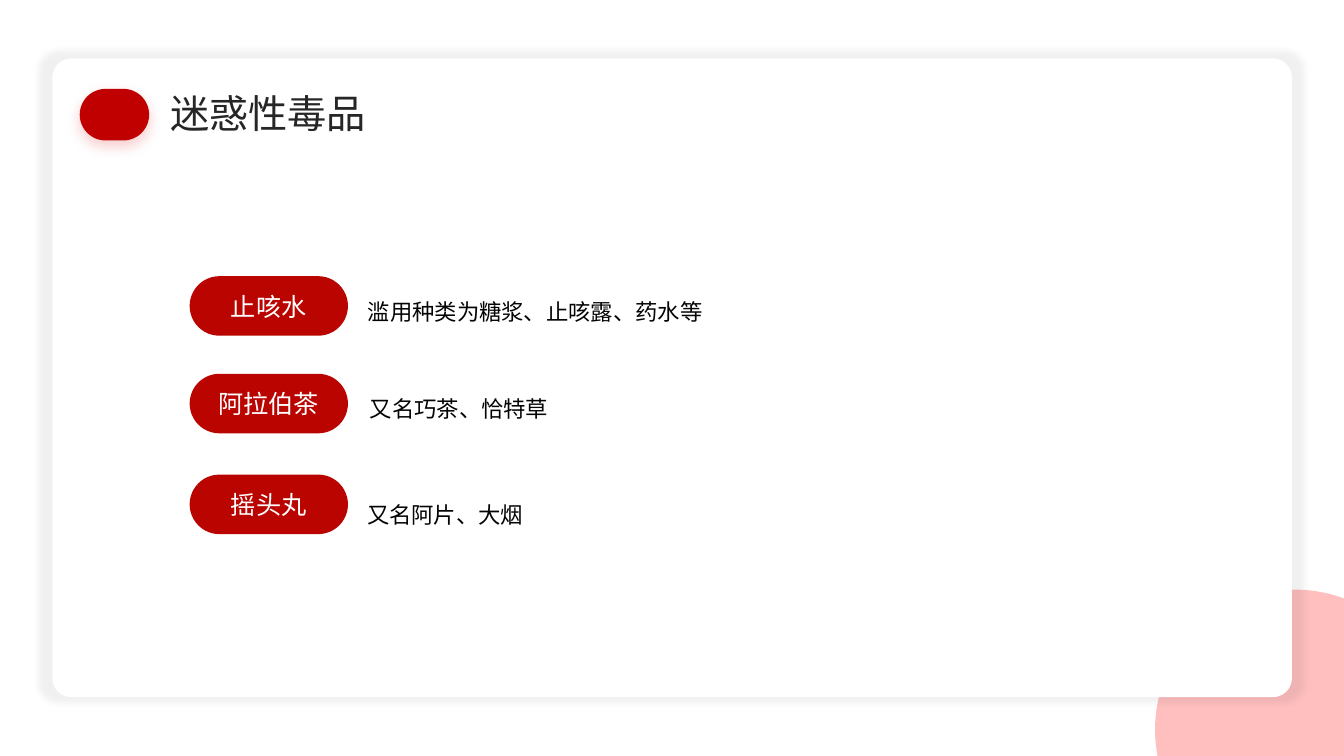
from dataclasses import dataclass
from math import asin, acos, cos, pi, sin

from pptx import Presentation
from pptx.dml.color import RGBColor
from pptx.enum.shapes import MSO_AUTO_SHAPE_TYPE as Preset
from pptx.enum.text import MSO_ANCHOR as Anchor, MSO_AUTO_SIZE as AutoSize, PP_ALIGN as Align
from pptx.oxml.ns import qn
from pptx.oxml.xmlchemy import OxmlElement
from pptx.util import Cm, Pt

FONT = "Noto Sans CJK SC"
PAGE_WIDTH, PAGE_HEIGHT = 33.87, 19.05
RED, PILL_RED, PINK, WHITE = "C00000", "B90400", "FFBFBF", "FFFFFF"
PILL_LEFT, PILL_WIDTH, PILL_HEIGHT = 4.78, 3.99, 1.5


@dataclass
class Frame:
    left: float
    top: float
    width: float
    height: float

    def lengths(self) -> tuple:
        return Cm(self.left), Cm(self.top), Cm(self.width), Cm(self.height)


@dataclass
class Shadow:
    color: str
    alpha: int
    blur: float
    distance: float = 0
    angle: int = 0
    scale: int = 100


@dataclass
class Drug:
    name: str
    pill_top: float
    note: str
    note_frame: Frame


DRUGS = [
    Drug("止咳水", 6.96, "滥用种类为糖浆、止咳露、药水等", Frame(9.02, 7.19, 9.07, 1.14)),
    Drug("阿拉伯茶", 9.42, "又名巧茶、恰特草", Frame(9.07, 9.63, 5.08, 1.14)),
    Drug("摇头丸", 11.96, "又名阿片、大烟", Frame(9.0, 12.29, 4.5, 1.14)),
]


def rgb(color: str) -> RGBColor:
    return RGBColor.from_string(color)


def paint(shape, color: str) -> None:
    shape.shadow.inherit = False
    shape.fill.solid()
    shape.fill.fore_color.rgb = rgb(color)
    shape.line.fill.background()


def add_shadow(shape, shadow: Shadow) -> None:
    outer = OxmlElement("a:outerShdw")
    settings = {
        "blurRad": Pt(shadow.blur),
        "dist": Pt(shadow.distance),
        "dir": shadow.angle * 60000,
        "sx": shadow.scale * 1000,
        "sy": shadow.scale * 1000,
        "algn": "ctr",
        "rotWithShape": 0,
    }
    for key, value in settings.items():
        outer.set(key, str(value))
    color = OxmlElement("a:srgbClr")
    color.set("val", shadow.color)
    alpha = OxmlElement("a:alpha")
    alpha.set("val", str(shadow.alpha * 1000))
    color.append(alpha)
    outer.append(color)
    shape._element.spPr.find(qn("a:effectLst")).append(outer)


def add_rounded(page, frame: Frame, color: str, rounding: float = 0.5):
    shape = page.shapes.add_shape(Preset.ROUNDED_RECTANGLE, *frame.lengths())
    shape.adjustments[0] = rounding
    paint(shape, color)
    return shape


def write(box, text: str, *, size: float, color: str, align=Align.LEFT,
          spacing: float = 1.0, anchor=Anchor.TOP, wrap: bool = True) -> None:
    frame = box.text_frame
    frame.word_wrap = wrap
    frame.vertical_anchor = anchor
    para = frame.paragraphs[0]
    para.alignment = align
    para.line_spacing = spacing
    span = para.add_run()
    span.text = text
    span.font.size = Pt(size)
    span.font.name = FONT
    span.font.color.rgb = rgb(color)
    east_asian = OxmlElement("a:ea")
    east_asian.set("typeface", FONT)
    span._r.get_or_add_rPr().append(east_asian)


def add_text(page, frame: Frame, text: str, **style) -> None:
    box = page.shapes.add_textbox(*frame.lengths())
    write(box, text, **style)
    box.text_frame.auto_size = AutoSize.SHAPE_TO_FIT_TEXT


def add_corner_circle(page, x: float, y: float, radius: float, steps: int = 90) -> None:
    """Draw the part of a circle that lies inside the bottom right corner."""
    start = pi - asin((PAGE_HEIGHT - y) / radius)
    end = 2 * pi - acos((PAGE_WIDTH - x) / radius)
    angles = [start + (end - start) * step / steps for step in range(steps + 1)]
    points = [(Cm(x + radius * cos(a)), Cm(y + radius * sin(a))) for a in angles]
    points.append((Cm(PAGE_WIDTH), Cm(PAGE_HEIGHT)))
    builder = page.shapes.build_freeform(*points[0])
    builder.add_line_segments(points[1:], close=True)
    paint(builder.convert_to_shape(), PINK)


def main() -> None:
    deck = Presentation()
    deck.slide_width, deck.slide_height = Cm(PAGE_WIDTH), Cm(PAGE_HEIGHT)
    page = deck.slides.add_slide(deck.slide_layouts[6])

    # Background circle and white panel
    add_corner_circle(page, 32.64, 18.39, 3.53)
    panel = add_rounded(page, Frame(1.32, 1.47, 31.24, 16.1), WHITE, 0.03)
    add_shadow(panel, Shadow("000000", 5, 5, scale=102))

    # Title with its plain marker
    marker = add_rounded(page, Frame(2.01, 2.24, 1.75, 1.3), RED)
    add_shadow(marker, Shadow("DE0000", 20, 10, 4, 90))
    add_text(page, Frame(4.04, 2.13, 5.51, 1.45), "迷惑性毒品",
             size=28, color="262626", wrap=False)

    # Drug names with their notes
    for drug in DRUGS:
        pill = add_rounded(page, Frame(PILL_LEFT, drug.pill_top, PILL_WIDTH, PILL_HEIGHT),
                           PILL_RED)
        write(pill, drug.name, size=18, color=WHITE, align=Align.CENTER, anchor=Anchor.MIDDLE)
        add_text(page, drug.note_frame, drug.note, size=16, color="040404", spacing=1.3)

    deck.save("out.pptx")


if __name__ == "__main__":
    main()
